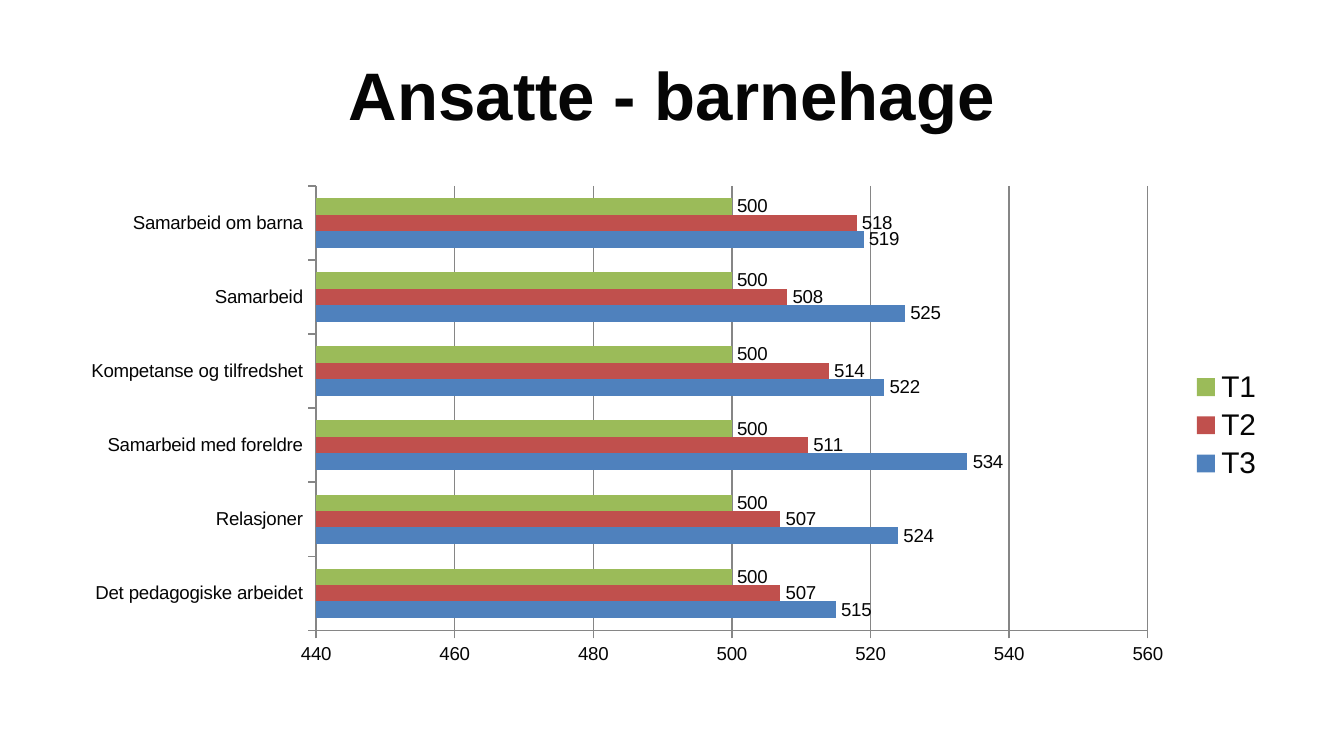
from dataclasses import dataclass

from pptx import Presentation
from pptx.chart.data import CategoryChartData
from pptx.dml.color import RGBColor
from pptx.enum import chart as ch, text
from pptx.util import Inches, Pt


@dataclass(frozen=True)
class Theme:
    font: str = "Arial"
    ink: str = "050505"
    grid: str = "868686"
    title_size: int = 36
    chart_size: int = 10
    legend_size: int = 16


THEME = Theme()

AREAS = [
    "Det pedagogiske arbeidet", "Relasjoner", "Samarbeid med foreldre",
    "Kompetanse og tilfredshet", "Samarbeid", "Samarbeid om barna",
]
# Survey round, bar colour, score per area
ROUNDS = [
    ("T3", "4F81BD", (515, 524, 534, 522, 525, 519)),
    ("T2", "C0504D", (507, 507, 511, 514, 508, 518)),
    ("T1", "9BBB59", (500,) * len(AREAS)),
]


def style_font(font, size, bold=False):
    font.name = THEME.font
    font.size = Pt(size)
    font.bold = bold
    font.color.rgb = RGBColor.from_string(THEME.ink)


def style_line(line):
    line.color.rgb = RGBColor.from_string(THEME.grid)
    line.width = Pt(0.75)


def set_title(slide, wording):
    title = slide.shapes.title
    title.left, title.top = Inches(0.5), Inches(0.23)
    title.width, title.height = Inches(9), Inches(0.94)
    frame = title.text_frame
    frame.text = wording
    frame.vertical_anchor = text.MSO_ANCHOR.MIDDLE
    heading = frame.paragraphs[0]
    heading.alignment = text.PP_ALIGN.CENTER
    style_font(heading.font, THEME.title_size, bold=True)


def style_axes(chart):
    scores = chart.value_axis
    scores.minimum_scale, scores.maximum_scale, scores.major_unit = 440, 560, 20
    scores.has_major_gridlines = True
    style_line(scores.major_gridlines.format.line)
    for axis in (chart.category_axis, scores):
        axis.major_tick_mark = ch.XL_TICK_MARK.OUTSIDE
        axis.minor_tick_mark = ch.XL_TICK_MARK.NONE
        style_line(axis.format.line)
        style_font(axis.tick_labels.font, THEME.chart_size)


def add_score_chart(slide):
    data = CategoryChartData(number_format="General")
    data.categories = AREAS
    for name, _, scores in ROUNDS:
        data.add_series(name, scores)
    chart = slide.shapes.add_chart(
        ch.XL_CHART_TYPE.BAR_CLUSTERED,
        Inches(0.5), Inches(1.31), Inches(9), Inches(3.71), data,
    ).chart
    chart.has_title = False
    style_font(chart.font, THEME.chart_size)
    style_axes(chart)

    # Bars with their values
    plot = chart.plots[0]
    plot.gap_width = 150
    plot.vary_by_categories = False
    for series, (_, colour, _) in zip(plot.series, ROUNDS):
        series.format.fill.solid()
        series.format.fill.fore_color.rgb = RGBColor.from_string(colour)
        labels = series.data_labels
        labels.show_value = True
        labels.position = ch.XL_LABEL_POSITION.OUTSIDE_END
        style_font(labels.font, THEME.chart_size)

    # Legend
    chart.has_legend = True
    chart.legend.position = ch.XL_LEGEND_POSITION.RIGHT
    chart.legend.include_in_layout = False
    style_font(chart.legend.font, THEME.legend_size)


def main():
    deck = Presentation()
    # Widescreen, 16:9
    deck.slide_width = Inches(10)
    deck.slide_height = deck.slide_width * 9 // 16
    slide = deck.slides.add_slide(deck.slide_layouts[5])
    set_title(slide, "Ansatte - barnehage")
    add_score_chart(slide)
    deck.save("out.pptx")


if __name__ == "__main__":
    main()
